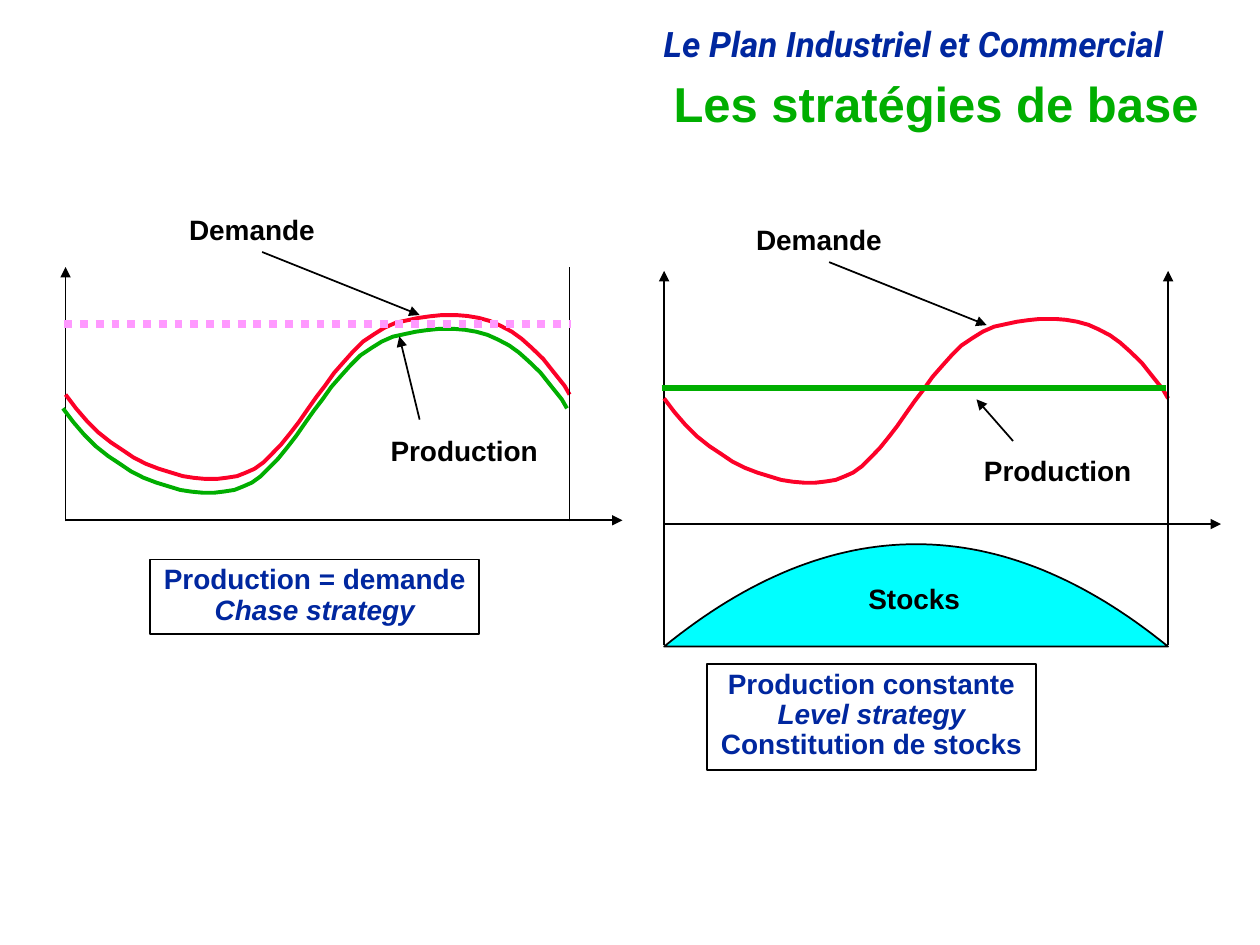
from pptx import Presentation, util as u
from pptx.dml.color import RGBColor
from pptx.enum import dml, shapes, text
from pptx.oxml.ns import qn
from lxml import etree

COLORS = {
    "blue": "00279F",
    "green": "00AE00",
    "red": "FC0128",
    "cyan": "00FFFF",
    "pink": "FF99FF",
    "black": "000000",
}

WAVE = [
    (0, 45.4), (6, 53.3), (12.2, 60.5), (18.7, 67), (25.9, 72.7), (32.4, 77),
    (38.9, 81.4), (46, 85), (53.3, 87.8), (60.5, 90), (67, 92), (73.4, 93),
    (80, 93.6), (86.4, 93.6), (92.2, 92.9), (98, 92), (103, 90), (108, 87.8),
    (113, 84.2), (118, 79.2), (123.1, 74), (128.2, 67.7), (133.2, 61.2),
    (138.2, 54), (143.3, 46.8), (148.3, 40.3), (153.4, 33.1), (159.1, 26.6),
    (164.2, 20.9), (170, 15.1), (176.4, 10.8), (182.2, 7.2), (188.6, 4.4),
    (195.1, 3), (201.6, 1.6), (208, 0.7), (214.6, 0), (223.9, 0), (229.7, 0.5),
    (236.2, 1.6), (242.6, 3.4), (248.4, 6), (254.9, 9.4), (260.6, 13.5),
    (266.4, 18.7), (272.9, 25), (278.6, 32.2), (285.1, 40.3), (288, 45.4),
]
PERIOD = 288
AXIS_HEIGHT = 145.4
AXIS_LENGTH = 318.2
LEFT_PANEL = (37.5, 152.6)
RIGHT_PANEL = (379.5, 154.8)


class SlideBuilder:
    font_name = "Arial"
    label_size = 16
    line_spacing = 0.9

    def __init__(self, slide):
        self.slide = slide

    def color(self, name):
        return RGBColor.from_string(COLORS[name])

    def stroke(self, shape, color, width):
        shape.line.color.rgb = self.color(color)
        shape.line.width = u.Pt(width)

    def line(self, start, end, color="black", width=1, arrow=False, dash=None):
        points = [u.Pt(value) for value in (*start, *end)]
        connector = self.slide.shapes.add_connector(shapes.MSO_CONNECTOR.STRAIGHT, *points)
        self.stroke(connector, color, width)
        if dash:
            connector.line.dash_style = dash
        if arrow:
            outline = connector._element.spPr.find(qn("a:ln"))
            etree.SubElement(outline, qn("a:tailEnd"), type="triangle")
        etree.SubElement(connector._element.spPr, qn("a:effectLst"))

    def freeform(self, points, color, width, fill=None):
        points = [(u.Pt(x), u.Pt(y)) for x, y in points]
        builder = self.slide.shapes.build_freeform(*points[0])
        builder.add_line_segments(points[1:], close=fill is not None)
        shape = builder.convert_to_shape()
        shape.shadow.inherit = False
        self.stroke(shape, color, width)
        if fill:
            shape.fill.solid()
            shape.fill.fore_color.rgb = self.color(fill)
        else:
            shape.fill.background()

    def wave(self, left, top, color):
        self.freeform([(left + x, top + y) for x, y in WAVE], color, 2.25)

    def set_text(self, shape, lines, color, size, align, font=None, italics=(), wrap=False):
        frame = shape.text_frame
        frame.word_wrap = wrap
        frame.vertical_anchor = text.MSO_ANCHOR.TOP
        for index, line in enumerate(lines):
            paragraph = frame.paragraphs[0] if index == 0 else frame.add_paragraph()
            paragraph.text = line
            paragraph.alignment = align
            paragraph.line_spacing = self.line_spacing
            paragraph.font.name = font or self.font_name
            paragraph.font.size = u.Pt(size)
            paragraph.font.bold = True
            paragraph.font.italic = index in italics
            paragraph.font.color.rgb = self.color(color)

    def heading(self, box, line, color, size, font=None, italics=()):
        shape = self.slide.shapes.add_textbox(*map(u.Pt, box))
        self.set_text(shape, [line], color, size, text.PP_ALIGN.RIGHT, font, italics, wrap=True)
        shape.text_frame.vertical_anchor = text.MSO_ANCHOR.MIDDLE

    def label(self, left, top, width, line):
        shape = self.slide.shapes.add_textbox(*map(u.Pt, (left, top, width, 24.5)))
        self.set_text(shape, [line], "black", self.label_size, text.PP_ALIGN.CENTER)

    def caption(self, box, lines, italics):
        shape = self.slide.shapes.add_shape(shapes.MSO_SHAPE.RECTANGLE, *map(u.Pt, box))
        shape.shadow.inherit = False
        shape.fill.background()
        self.stroke(shape, "black", 1)
        self.set_text(shape, lines, "blue", self.label_size, text.PP_ALIGN.CENTER, italics=italics)

    def panel(self, left, top, end_arrow):
        bottom = top + AXIS_HEIGHT
        right = left + PERIOD
        self.line((left, bottom), (left, top), arrow=True)
        self.line((left, bottom - 0.7), (left + AXIS_LENGTH, bottom - 0.7), arrow=True)
        self.wave(left, top + 27.5, "red")
        self.line((right, bottom), (right, top), arrow=end_arrow)

    def demand(self, left, top):
        self.label(left, top, 86.4, "Demande")
        self.line((left + 49, top + 23.8), (left + 139, top + 59.8), arrow=True)

    def production(self, left, top, start, end):
        self.label(left, top, 98.6, "Production")
        self.line(start, end, arrow=True)

    def stocks(self, left, top, bottom):
        steps = 64
        arc = []
        for step in range(steps + 1):
            offset = 2 * step / steps - 1
            arc.append((left + PERIOD * step / steps, top + (bottom - top) * offset ** 2))
        self.freeform(arc, "black", 1, fill="cyan")
        for x in (left, left + PERIOD):
            self.line((x, 298), (x, bottom - 0.7))
        self.label(488.9, 331.2, 67, "Stocks")


def main():
    presentation = Presentation()
    presentation.slide_width = u.Pt(720)
    presentation.slide_height = u.Pt(540)
    builder = SlideBuilder(presentation.slides.add_slide(presentation.slide_layouts[6]))

    builder.heading((90, 12.2, 581.8, 28.8), "Le Plan Industriel et Commercial",
                    "blue", 20, font="Roboto", italics=(0,))
    builder.heading((121.7, 43.2, 570.2, 36), "Les stratégies de base", "green", 28)

    builder.panel(*RIGHT_PANEL, end_arrow=True)
    builder.panel(*LEFT_PANEL, end_arrow=False)
    builder.stocks(RIGHT_PANEL[0], 311, 369.5)
    builder.caption((85.9, 319.7, 188, 42.5),
                    ["Production = demande", "Chase strategy"], italics=(1,))
    builder.caption((404, 379.4, 188, 60.5),
                    ["Production constante", "Level strategy", "Constitution de stocks"],
                    italics=(1,))

    builder.line((378, 221.8), (666, 221.8), "green", 3)
    builder.wave(36, 188, "green")
    builder.demand(100.8, 120.2)
    builder.demand(424.8, 126)
    builder.production(216, 246.2, (239.8, 239.8), (228.2, 192.2))
    builder.production(555.1, 257.8, (578.9, 252), (558, 228.2))
    builder.line((36.7, 185), (326.2, 185), "pink", 4.5, dash=dml.MSO_LINE.ROUND_DOT)

    presentation.save("out.pptx")


if __name__ == "__main__":
    main()
